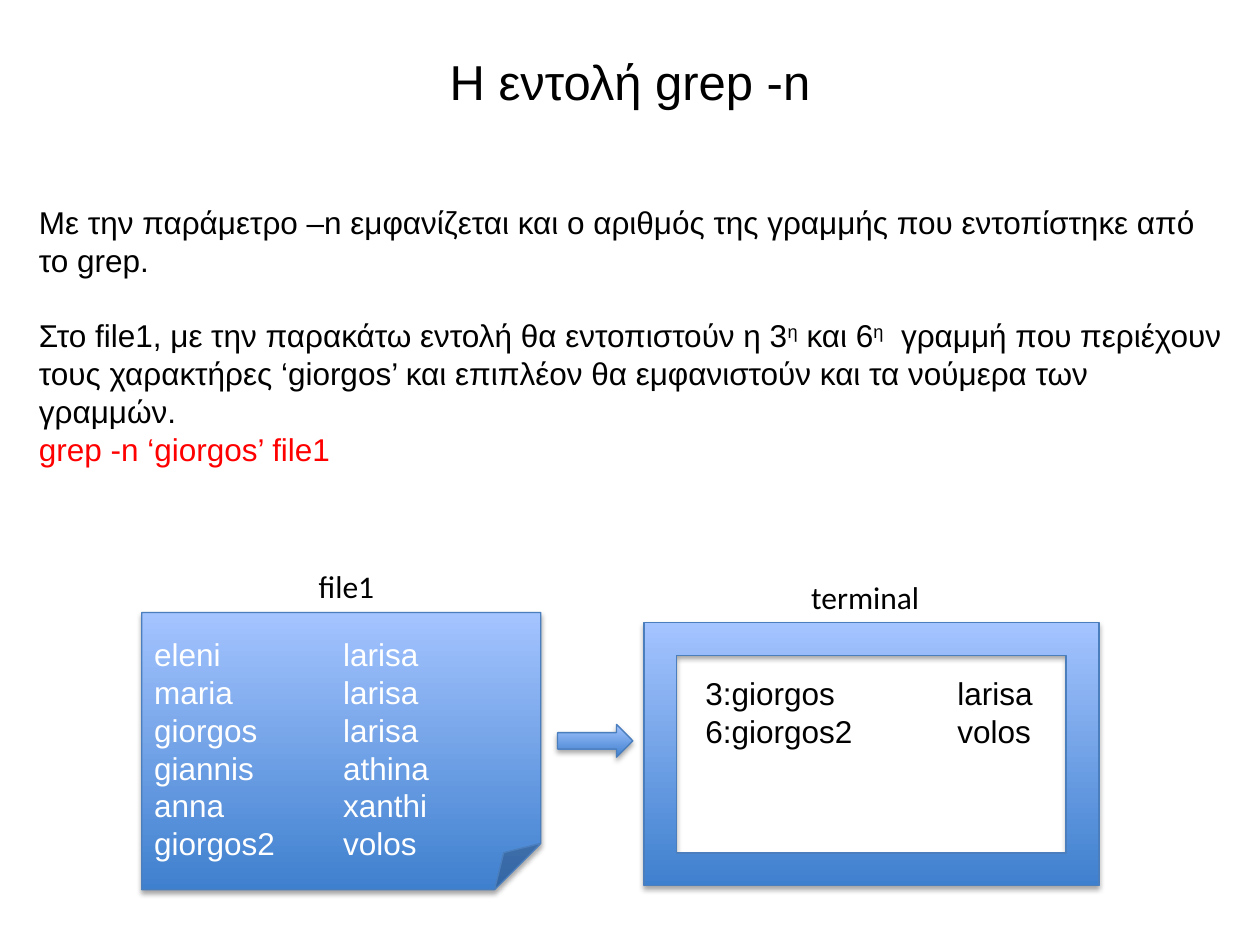
from dataclasses import dataclass

from lxml import etree
from pptx import Presentation
from pptx.dml.color import RGBColor
from pptx.enum import shapes, text
from pptx.oxml.ns import qn
from pptx.util import Pt

HUES = {"ink": "000000", "code": "FF0000", "pale": "FFFFFF",
        "low": "3F80CE", "high": "A4C4FF", "edge": "4B7EBC"}
KIND = shapes.MSO_SHAPE
ANCHOR = text.MSO_ANCHOR


@dataclass(frozen=True)
class Box:
    left: float
    top: float
    width: float
    height: float

    def pts(self):
        return [Pt(v) for v in (self.left, self.top, self.width, self.height)]


@dataclass(frozen=True)
class Line:
    """One paragraph; words at odd places are raised."""
    words: tuple
    hue: str = "ink"
    before: float = 0


def hue(name: str) -> RGBColor:
    return RGBColor.from_string(HUES[name])


def add_tabs(para, stops: tuple) -> None:
    tabs = etree.SubElement(para._p.get_or_add_pPr(), qn("a:tabLst"))
    for stop in stops:
        etree.SubElement(tabs, qn("a:tab"), pos=str(Pt(stop)), algn="l")


def write(frame, lines, *, size=18, font="Arial", align=text.PP_ALIGN.LEFT,
          anchor=ANCHOR.TOP, wrap=True, tabs=()) -> None:
    frame.word_wrap = wrap
    frame.vertical_anchor = anchor
    for i, line in enumerate(lines):
        para = frame.paragraphs[0] if i == 0 else frame.add_paragraph()
        para.alignment = align
        if line.before:
            para.space_before = Pt(line.before)
        if tabs:
            add_tabs(para, tabs)
        for j, words in enumerate(line.words):
            run = para.add_run()
            run.text = words
            run.font.size = Pt(size)
            run.font.name = font
            run.font.color.rgb = hue(line.hue)
            if j % 2:
                run._r.get_or_add_rPr().set("baseline", "30000")


def add_text(slide, box: Box, lines, **style) -> None:
    write(slide.shapes.add_textbox(*box.pts()).text_frame, lines, **style)


def add_shade(shape) -> None:
    """Cast a soft shadow straight down."""
    shape.shadow.inherit = False
    effects = shape._element.spPr.find(qn("a:effectLst"))
    cast = etree.SubElement(effects, qn("a:outerShdw"), blurRad=str(Pt(3.1)),
                            dist=str(Pt(1.8)), dir="5400000", rotWithShape="0")
    tint = etree.SubElement(cast, qn("a:srgbClr"), val=HUES["ink"])
    etree.SubElement(tint, qn("a:alpha"), val="35000")


def add_block(slide, kind, box: Box):
    shape = slide.shapes.add_shape(kind, *box.pts())
    shape.fill.gradient()
    shape.fill.gradient_angle = 90
    for stop, name, spot in zip(shape.fill.gradient_stops, ("low", "high"), (0, 1)):
        stop.color.rgb = hue(name)
        stop.position = spot
    shape.line.color.rgb = hue("edge")
    shape.line.width = Pt(0.75)
    add_shade(shape)
    return shape


def rows(pairs, name: str) -> list:
    return [Line((f"{who}\t\t{town}",), name) for who, town in pairs]


BODY = [
    Line(("Με την παράμετρο –n εμφανίζεται και ο αριθμός της γραμμής που "
          "εντοπίστηκε από το grep.",)),
    Line(("Στο file1, με την παρακάτω εντολή θα εντοπιστούν η 3", "η", " και 6", "η",
          "  γραμμή που περιέχουν τους χαρακτήρες ‘giorgos’ και επιπλέον θα "
          "εμφανιστούν και τα νούμερα των γραμμών."), before=21.6),
    Line(("grep -n ‘giorgos’ file1",), "code"),
]
FILE = [("eleni", "larisa"), ("maria", "larisa"), ("giorgos", "larisa"),
        ("giannis", "athina"), ("anna", "xanthi"), ("giorgos2", "volos")]
FOUND = [("3:giorgos", "larisa"), ("6:giorgos2", "volos")]
LABELS = [("file1", Box(175, 320.4, 46.8, 28.8)),
          ("terminal", Box(456.5, 327, 77, 28.8))]


def main() -> None:
    deck = Presentation()
    deck.slide_width, deck.slide_height = Pt(720), Pt(540)
    slide = deck.slides.add_slide(deck.slide_layouts[6])

    add_text(slide, Box(36, 21.6, 648, 49), [Line(("Η εντολή grep -n",))], size=28,
             align=text.PP_ALIGN.CENTER, anchor=ANCHOR.MIDDLE)
    add_text(slide, Box(15.2, 112.5, 692, 160), BODY)

    page = add_block(slide, KIND.FOLDED_CORNER, Box(81, 350, 228, 158.4))
    page.text_frame.margin_top = Pt(13)
    page.text_frame.margin_bottom = 0
    write(page.text_frame, rows(FILE, "pale"), tabs=(72, 108))

    add_block(slide, KIND.RIGHT_ARROW, Box(318.6, 414, 43, 18.7))
    add_block(slide, KIND.FRAME, Box(368, 355.7, 260, 150.5))
    add_text(slide, Box(396, 381.6, 208, 72.7), rows(FOUND, "ink"), tabs=(108, 144))

    for name, box in LABELS:
        add_text(slide, box, [Line((name,))], font="Calibri", wrap=False)

    deck.save("out.pptx")


if __name__ == "__main__":
    main()
